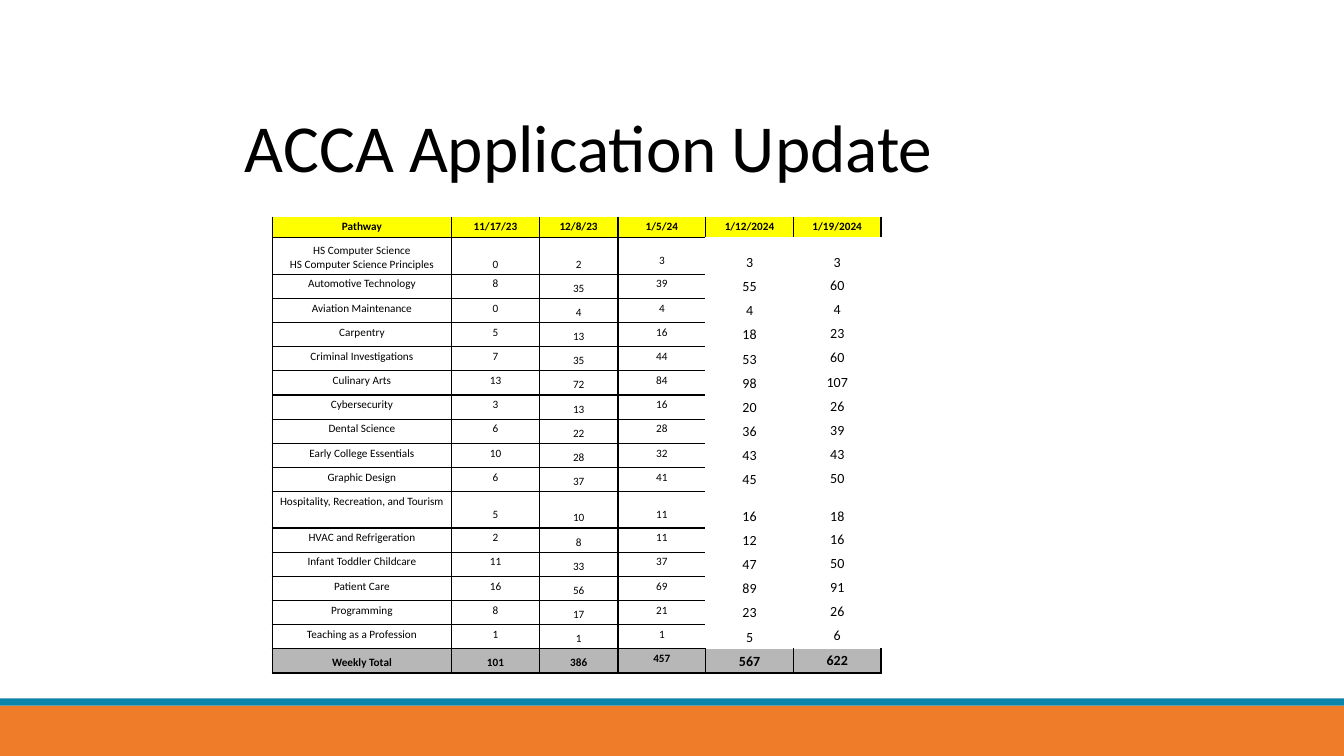
"""Build the ACCA application update slide with its pathway table."""
from dataclasses import dataclass

from lxml.etree import SubElement
from pptx import Presentation
from pptx.dml.color import RGBColor
from pptx.enum.shapes import MSO_SHAPE
from pptx.enum.text import MSO_ANCHOR, MSO_AUTO_SIZE, PP_ALIGN
from pptx.oxml.ns import qn
from pptx.util import Inches, Pt

HEADINGS = ["Pathway", "11/17/23", "12/8/23", "1/5/24", "1/12/2024", "1/19/2024"]
PATHWAYS = [
    ["HS Computer Science\vHS Computer Science Principles", 0, 2, 3, 3, 3],
    ["Automotive Technology", 8, 35, 39, 55, 60],
    ["Aviation Maintenance", 0, 4, 4, 4, 4],
    ["Carpentry", 5, 13, 16, 18, 23],
    ["Criminal Investigations", 7, 35, 44, 53, 60],
    ["Culinary Arts", 13, 72, 84, 98, 107],
    ["Cybersecurity", 3, 13, 16, 20, 26],
    ["Dental Science", 6, 22, 28, 36, 39],
    ["Early College Essentials", 10, 28, 32, 43, 43],
    ["Graphic Design", 6, 37, 41, 45, 50],
    ["Hospitality, Recreation, and Tourism", 5, 10, 11, 16, 18],
    ["HVAC and Refrigeration", 2, 8, 11, 12, 16],
    ["Infant Toddler Childcare", 11, 33, 37, 47, 50],
    ["Patient Care", 16, 56, 69, 89, 91],
    ["Programming", 8, 17, 21, 23, 26],
    ["Teaching as a Profession", 1, 1, 1, 5, 6],
]
TOTALS = ["Weekly Total", 101, 386, 457, 567, 622]
COLUMN_WIDTHS = [1.78, 0.87, 0.78, 0.87, 0.87, 0.87]
HEADER_HEIGHT, ROW_HEIGHT, TALL_HEIGHT = 0.21, 0.24, 0.36
COMPUTING_ROW, HOSPITALITY_ROW = 1, 11
LOWERED_CELLS = {(COMPUTING_ROW, 3), (COMPUTING_ROW, 5), (HOSPITALITY_ROW, 1),
                 (HOSPITALITY_ROW, 3), (HOSPITALITY_ROW, 5)}


@dataclass(frozen=True)
class Theme:
    font: str = "Calibri"
    ink: str = "000000"
    paper: str = "FFFFFF"
    orange: str = "EE7C29"
    blue: str = "0D85AB"
    header: str = "FFFF00"
    total: str = "B7B7B7"
    title_size: int = 48
    small_size: int = 8
    recent_size: int = 10


class SlideBuilder:
    def __init__(self, deck, theme):
        self.theme = theme
        self.page = deck.slides.add_slide(deck.slide_layouts[5])

    def style(self, paragraph, size, bold=False):
        font = paragraph.font
        font.name = self.theme.font
        font.size = Pt(size)
        font.bold = bold
        font.color.rgb = RGBColor.from_string(self.theme.ink)

    def bar(self, top, height, color):
        shape = self.page.shapes.add_shape(
            MSO_SHAPE.RECTANGLE, 0, Inches(top), Inches(13.33), Inches(height))
        shape.shadow.inherit = False
        shape.fill.solid()
        shape.fill.fore_color.rgb = RGBColor.from_string(color)
        shape.line.fill.background()

    def title(self, text):
        box = self.page.shapes.title
        box.left, box.top = Inches(2.33), Inches(0.31)
        box.width, box.height = Inches(11), Inches(1.59)
        frame = box.text_frame
        frame.text = text
        frame.auto_size = MSO_AUTO_SIZE.NONE
        frame.vertical_anchor = MSO_ANCHOR.BOTTOM
        paragraph = frame.paragraphs[0]
        paragraph.alignment = PP_ALIGN.LEFT
        paragraph.line_spacing = 0.85
        self.style(paragraph, self.theme.title_size)

    def borders(self, cell, colors):
        properties = cell._tc.get_or_add_tcPr()
        for side, color in zip("LRTB", colors):
            line = SubElement(properties, qn(f"a:ln{side}"), w=str(Pt(1)))
            if color is None:
                SubElement(line, qn("a:noFill"))
            else:
                fill = SubElement(line, qn("a:solidFill"))
                SubElement(fill, qn("a:srgbClr"), val=color)

    def border_colors(self, is_header, is_total, column):
        ink, paper = self.theme.ink, self.theme.paper
        recent = column >= 4
        if is_header:
            return ink, ink, None, paper if recent else ink
        if is_total:
            return ink, ink, paper if recent else ink, ink
        if recent:
            return paper, paper, paper, paper
        return ink, paper if column == 3 else ink, ink, ink

    def fill_cell(self, cell, text, row, column, last_row):
        theme = self.theme
        is_header, is_total = row == 0, row == last_row
        self.borders(cell, self.border_colors(is_header, is_total, column))
        if is_header or is_total:
            cell.fill.solid()
            cell.fill.fore_color.rgb = RGBColor.from_string(
                theme.header if is_header else theme.total)
        else:
            cell.fill.background()
        cell.margin_left = cell.margin_right = Inches(0.05 if column < 3 else 0.07)
        cell.margin_top = Inches(0.16 if (row, column) in LOWERED_CELLS else 0.03)
        cell.margin_bottom = Inches(0.03)
        low = not is_header and (
            column in (2, 4) or column < 2 and (is_total or row == COMPUTING_ROW))
        cell.vertical_anchor = MSO_ANCHOR.BOTTOM if low else MSO_ANCHOR.TOP
        cell.text_frame.text = str(text)
        paragraph = cell.text_frame.paragraphs[0]
        paragraph.alignment = PP_ALIGN.CENTER
        recent = column >= 4 and not is_header
        self.style(paragraph, theme.recent_size if recent else theme.small_size,
                   is_header or is_total)

    def table(self, rows):
        heights = [HEADER_HEIGHT] + [ROW_HEIGHT] * (len(rows) - 1)
        heights[COMPUTING_ROW] = heights[HOSPITALITY_ROW] = TALL_HEIGHT
        table = self.page.shapes.add_table(
            len(rows), len(COLUMN_WIDTHS), Inches(2.7), Inches(2.15),
            Inches(sum(COLUMN_WIDTHS)), Inches(sum(heights))).table
        table.first_row = table.horz_banding = False
        for column, width in zip(table.columns, COLUMN_WIDTHS):
            column.width = Inches(width)
        for row, (values, height) in enumerate(zip(rows, heights)):
            table.rows[row].height = Inches(height)
            for column, value in enumerate(values):
                self.fill_cell(table.cell(row, column), value, row, column,
                               len(rows) - 1)


def main():
    deck = Presentation()
    deck.slide_width, deck.slide_height = Inches(13.33), Inches(7.5)
    theme = Theme()
    builder = SlideBuilder(deck, theme)
    builder.bar(7, 0.5, theme.orange)
    builder.bar(6.93, 0.07, theme.blue)
    builder.title("ACCA Application Update")
    builder.table([HEADINGS, *PATHWAYS, TOTALS])
    deck.save("out.pptx")


if __name__ == "__main__":
    main()
